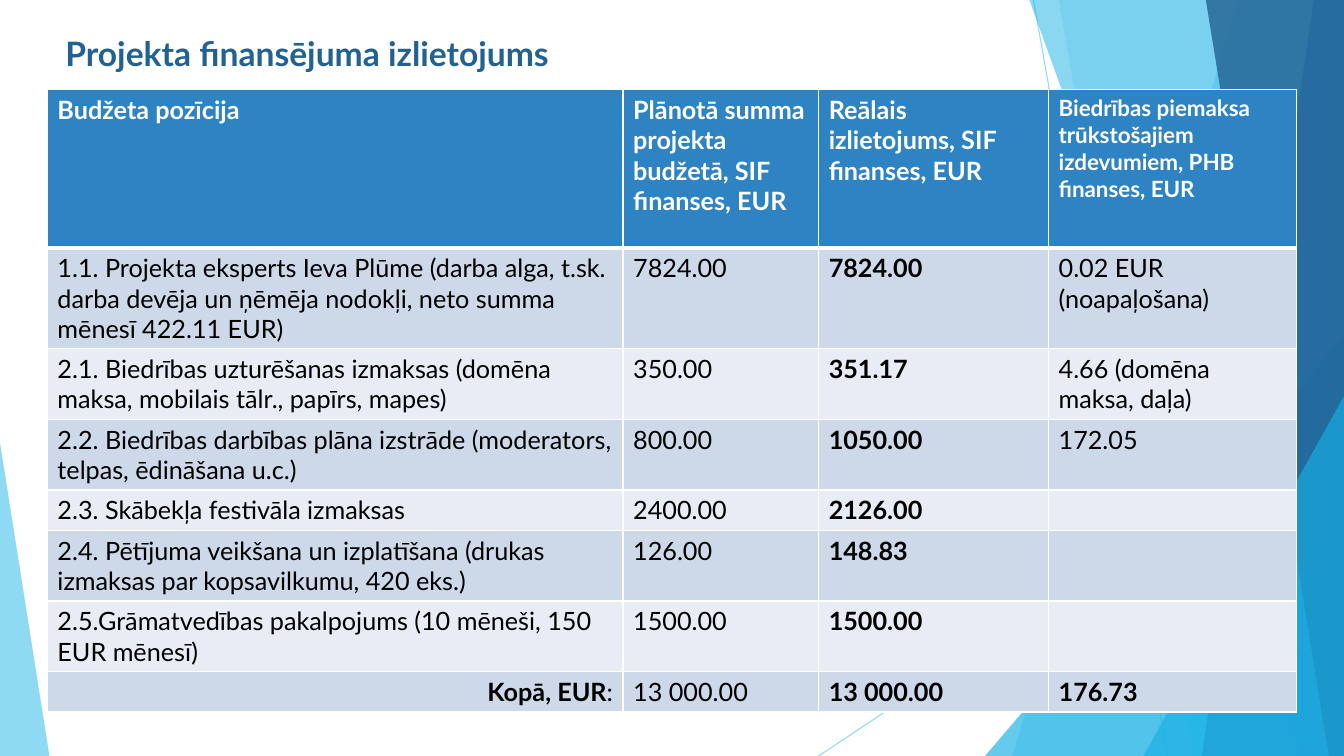
from dataclasses import dataclass

from lxml import etree
from pptx import Presentation, util as u
from pptx.dml.color import RGBColor
from pptx.enum import shapes, text
from pptx.oxml import ns

# Content
TITLE = "Projekta finansējuma izlietojums"
HEADER = ["Budžeta pozīcija", "Plānotā summa projekta budžetā, SIF finanses, EUR",
          "Reālais izlietojums, SIF finanses, EUR",
          "Biedrības piemaksa trūkstošajiem izdevumiem, PHB finanses, EUR"]
BUDGET = [
    ["1.1. Projekta eksperts Ieva Plūme (darba alga, t.sk. darba devēja un ņēmēja nodokļi, "
     "neto summa mēnesī 422.11 EUR)", "7824.00", "7824.00", "0.02 EUR (noapaļošana)"],
    ["2.1. Biedrības uzturēšanas izmaksas (domēna maksa, mobilais tālr., papīrs, mapes)",
     "350.00", "351.17", "4.66 (domēna maksa, daļa)"],
    ["2.2. Biedrības darbības plāna izstrāde (moderators, telpas, ēdināšana u.c.)",
     "800.00", "1050.00", "172.05"],
    ["2.3. Skābekļa festivāla izmaksas", "2400.00", "2126.00", ""],
    ["2.4. Pētījuma veikšana un izplatīšana (drukas izmaksas par kopsavilkumu, 420 eks.)",
     "126.00", "148.83", ""],
    ["2.5.Grāmatvedības pakalpojums (10 mēneši, 150 EUR mēnesī)", "1500.00", "1500.00", ""],
]
TOTAL = ["Kopā, EUR", "13 000.00", "13 000.00", "176.73"]
TOTAL_COLON = ":"


@dataclass(frozen=True)
class Theme:
    font: str = "Lato"
    title_size: int = 24
    body_size: int = 18
    small_size: int = 16
    white: str = "FFFFFF"
    black: str = "000000"
    sky: str = "5FCBEF"
    cyan: str = "17B0E4"
    blue: str = "2E83C3"
    navy: str = "226292"
    bands: tuple = ("CDD9E9", "E8EDF5")


T = Theme()

# Layout, in inches
W, H = 13.33, 7.5
TITLE_BOX = (0.55, 0.28, 9.4, 0.61)
TABLE_LEFT, TABLE_TOP = 0.47, 0.89
COLUMNS = [5.71, 1.94, 2.28, 2.46]
HEADER_HEIGHT, LINE_HEIGHT, CELL_PADDING = 1.57, 0.3, 0.1
LINES_PER_ROW = [3, 2, 2, 1, 2, 2, 1]
RAYS = [((10.25, 0), (11.58, H)), ((W, 4.03), (8.12, H))]

# Facets, back to front: strips run to the right edge (top x, bottom x);
# wedges stand on the bottom edge (left, top, width, apex share)
FACETS = [
    ("strip", (12.28, 10.04), T.sky, 36),
    ("strip", (10.5, 11.83), T.sky, 20),
    ("wedge", (9.77, 3.33, 3.56, 1), T.cyan, 66),
    ("strip", (10.21, 12.91), T.cyan, 50),
    ("strip", (13.03, 11.92), T.blue, 70),
    ("strip", (11.96, 13.18), T.navy, 80),
    ("wedge", (11.34, 3.93, 1.99, 1), T.cyan, 66),
    ("wedge", (0, 4.39, 0.49, 0), T.sky, 70),
]


def inches(*values):
    return [u.Inches(v) for v in values]


def paint(fill, color, opacity=100):
    fill.solid()
    fill.fore_color.rgb = RGBColor.from_string(color)
    if opacity < 100:
        clr = fill._xPr.find(".//" + ns.qn("a:srgbClr"))
        etree.SubElement(clr, ns.qn("a:alpha"), val=str(opacity * 1000))


def style(p, size, color, bold):
    p.font.name, p.font.size, p.font.bold = T.font, u.Pt(size), bold
    p.font.color.rgb = RGBColor.from_string(color)


def add_ray(s, start, end):
    ray = s.shapes.add_connector(shapes.MSO_CONNECTOR.STRAIGHT, *inches(*start, *end))
    ray.line.width = u.Pt(0.75)
    paint(ray.line.fill, T.sky, 70)
    etree.SubElement(ray._element.spPr, ns.qn("a:effectLst"))


def add_facet(s, kind, geometry, color, opacity):
    if kind == "strip":
        top_x, bottom_x = geometry
        outline = s.shapes.build_freeform(*inches(top_x, 0))
        outline.add_line_segments([inches(*pt) for pt in [(W, 0), (W, H), (bottom_x, H)]])
        sp = outline.convert_to_shape()
    else:
        left, top, width, apex = geometry
        sp = s.shapes.add_shape(shapes.MSO_SHAPE.ISOSCELES_TRIANGLE,
                                *inches(left, top, width, H - top))
        sp.adjustments[0] = apex
    paint(sp.fill, color, opacity)
    sp.line.fill.background()
    sp.shadow.inherit = False


def add_title(s):
    tf = s.shapes.add_textbox(*inches(*TITLE_BOX)).text_frame
    tf.word_wrap = True
    tf.vertical_anchor = text.MSO_ANCHOR.TOP
    p = tf.paragraphs[0]
    p.text = TITLE
    style(p, T.title_size, T.navy, True)


def set_borders(cell, top, bottom):
    tcPr = cell._tc.get_or_add_tcPr()
    for i, (side, width) in enumerate([("L", 1), ("R", 1), ("T", top), ("B", bottom)]):
        ln = etree.Element(ns.qn("a:ln" + side), w=str(u.Pt(width)))
        fill = etree.SubElement(ln, ns.qn("a:solidFill"))
        etree.SubElement(fill, ns.qn("a:srgbClr"), val=T.white)
        tcPr.insert(i, ln)


def add_budget_table(s):
    rows = [HEADER, *BUDGET, TOTAL]
    heights = [HEADER_HEIGHT] + [n * LINE_HEIGHT + CELL_PADDING for n in LINES_PER_ROW]
    table = s.shapes.add_table(len(rows), len(COLUMNS), *inches(
        TABLE_LEFT, TABLE_TOP, sum(COLUMNS), sum(heights))).table
    for column, width in zip(table.columns, COLUMNS):
        column.width = u.Inches(width)
    for r, (values, height) in enumerate(zip(rows, heights)):
        table.rows[r].height = u.Inches(height)
        header, total = r == 0, values is TOTAL
        for c, value in enumerate(values):
            cell = table.cell(r, c)
            paint(cell.fill, T.blue if header else T.bands[(r - 1) % 2])
            set_borders(cell, 3 if r == 1 else 1, 3 if header else 1)
            p = cell.text_frame.paragraphs[0]
            p.text = value
            small = header and c == len(COLUMNS) - 1
            style(p, T.small_size if small else T.body_size,
                  T.white if header else T.black,
                  header or c == 2 or (total and c != 1))
    # Total label: right aligned, with a light colon
    p = table.cell(len(rows) - 1, 0).text_frame.paragraphs[0]
    p.alignment = text.PP_ALIGN.RIGHT
    colon = p.add_run()
    colon.text, colon.font.bold = TOTAL_COLON, False


def main():
    prs = Presentation()
    prs.slide_width, prs.slide_height = inches(W, H)
    s = prs.slides.add_slide(prs.slide_layouts[6])
    for ray in RAYS:
        add_ray(s, *ray)
    for facet in FACETS:
        add_facet(s, *facet)
    add_title(s)
    add_budget_table(s)
    prs.save("out.pptx")


if __name__ == "__main__":
    main()
